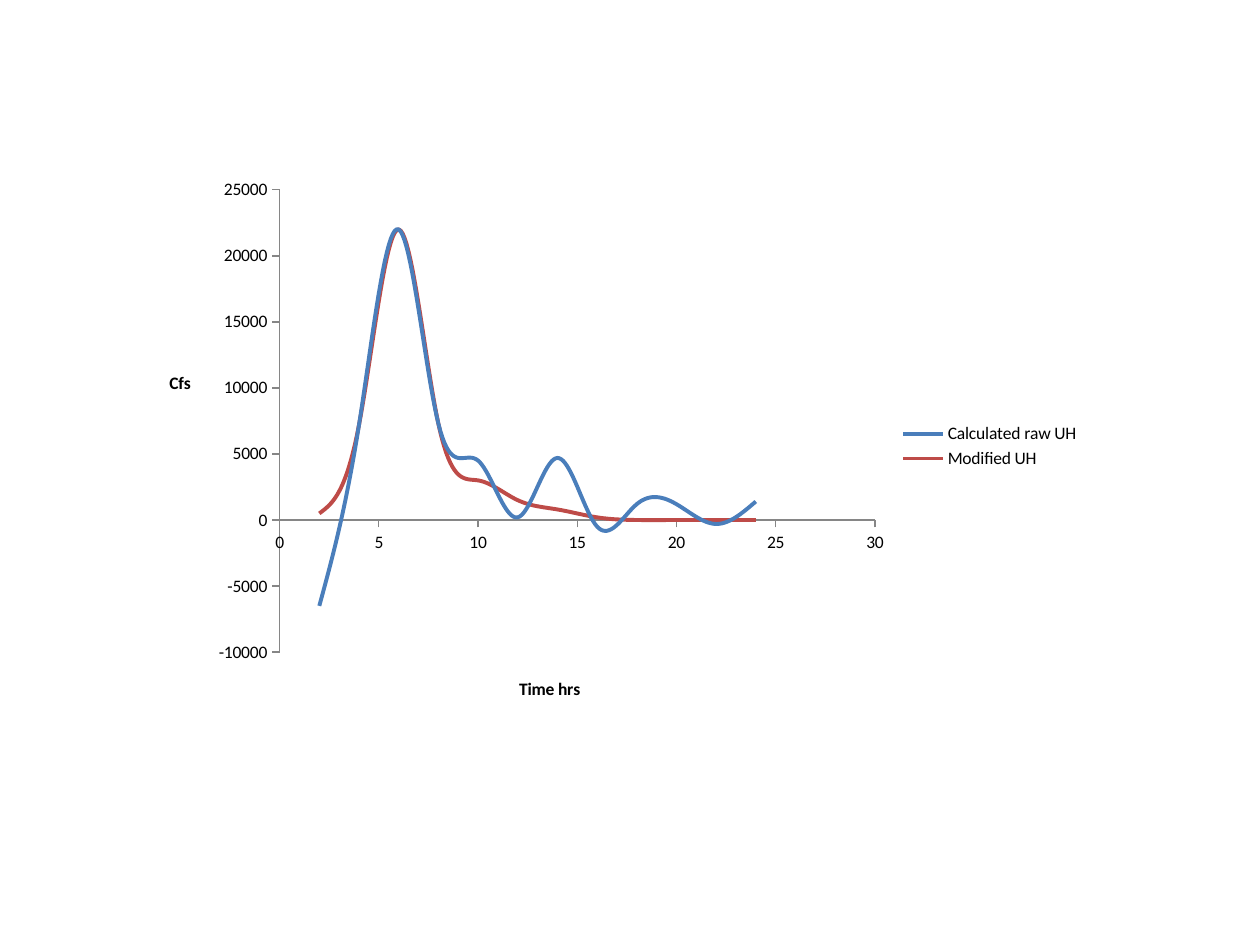
from dataclasses import dataclass

from lxml import etree
from pptx import Presentation
from pptx.chart.data import XyChartData
from pptx.dml.color import RGBColor
from pptx.enum.chart import XL_CHART_TYPE, XL_LEGEND_POSITION, XL_MARKER_STYLE, XL_TICK_MARK
from pptx.oxml.ns import qn
from pptx.util import Cm, Pt

SMOOTH_SCATTER = XL_CHART_TYPE.XY_SCATTER_SMOOTH_NO_MARKERS
LEGEND_RIGHT = XL_LEGEND_POSITION.RIGHT
NO_MARKER = XL_MARKER_STYLE.NONE
TICK_OUTSIDE, TICK_NONE = XL_TICK_MARK.OUTSIDE, XL_TICK_MARK.NONE


@dataclass(frozen=True)
class Theme:
    font: str = "Calibri"
    size: Pt = Pt(10)
    text: RGBColor = RGBColor(0x00, 0x00, 0x00)
    axis: RGBColor = RGBColor(0x86, 0x86, 0x86)
    raw: RGBColor = RGBColor(0x4A, 0x7E, 0xBB)
    modified: RGBColor = RGBColor(0xBE, 0x4B, 0x48)
    curve_width: Pt = Pt(2.25)
    axis_width: Pt = Pt(0.75)


def set_layout(element, index, **fractions):
    """Place a chart part by fractions of the chart area; index is the layout's child position."""
    for old in element.findall(qn("c:layout")):
        element.remove(old)
    layout = etree.Element(qn("c:layout"))
    element.insert(index, layout)
    manual = etree.SubElement(layout, qn("c:manualLayout"))
    if "w" in fractions:
        etree.SubElement(manual, qn("c:layoutTarget"), val="inner")
    for mode in ("xMode", "yMode"):
        etree.SubElement(manual, qn(f"c:{mode}"), val="edge")
    for key, fraction in fractions.items():
        etree.SubElement(manual, qn(f"c:{key}"), val=str(fraction))


theme = Theme()
prs = Presentation()
prs.slide_width, prs.slide_height = Cm(25.4), Cm(19.05)
slide = prs.slides.add_slide(prs.slide_layouts[6])

hours = range(2, 25, 2)
hydrographs = {
    "Calculated raw UH": [-6500, 7200, 22000, 7300, 4500, 200,
                          4700, -500, 1200, 1200, -300, 1400],
    "Modified UH": [500, 7200, 22000, 7300, 3000, 1500,
                    800, 200, 0, 0, 0, 0],
}
chart_data = XyChartData(number_format="General")
for name, flows in hydrographs.items():
    hydrograph = chart_data.add_series(name)
    for hour, flow in zip(hours, flows):
        hydrograph.add_data_point(hour, flow)

chart = slide.shapes.add_chart(
    SMOOTH_SCATTER, Cm(2.97), Cm(3.38), Cm(19.05), Cm(11.23), chart_data
).chart
chart.has_title = False
chart.font.name = theme.font
chart.font.size = theme.size
chart.font.color.rgb = theme.text
chart.has_legend = True
chart.legend.position = LEGEND_RIGHT
chart.legend.include_in_layout = False
chart.plots[0].vary_by_categories = False
set_layout(chart._chartSpace.chart.plotArea, 0, x=0.14, y=0.04, w=0.63, h=0.83)

for curve, color in zip(chart.plots[0].series, (theme.raw, theme.modified)):
    curve._element.get_or_add_smooth().val = True
    curve.marker.style = NO_MARKER
    curve.format.line.color.rgb = color
    curve.format.line.width = theme.curve_width

time_axis, flow_axis = chart.category_axis, chart.value_axis
for axis, caption, low, high, step, x, y in (
    (time_axis, "Time hrs", 0, 30, 5, 0.39, 0.91),
    (flow_axis, "Cfs", -10000, 25000, 5000, 0.02, 0.36),
):
    axis.minimum_scale, axis.maximum_scale, axis.major_unit = low, high, step
    axis.has_major_gridlines = False
    axis.major_tick_mark, axis.minor_tick_mark = TICK_OUTSIDE, TICK_NONE
    axis.format.line.color.rgb = theme.axis
    axis.format.line.width = theme.axis_width
    axis.tick_labels.number_format = "General"
    axis.tick_labels.number_format_is_linked = False
    title_frame = axis.axis_title.text_frame
    title_frame.text = caption
    title_font = title_frame.paragraphs[0].runs[0].font
    title_font.name, title_font.size, title_font.bold = theme.font, theme.size, True
    title_font.color.rgb = theme.text
    title_frame._txBody.bodyPr.set("rot", "0")
    title_frame._txBody.bodyPr.set("vert", "horz")
    set_layout(axis.axis_title._element, 1, x=x, y=y)

prs.save("out.pptx")
